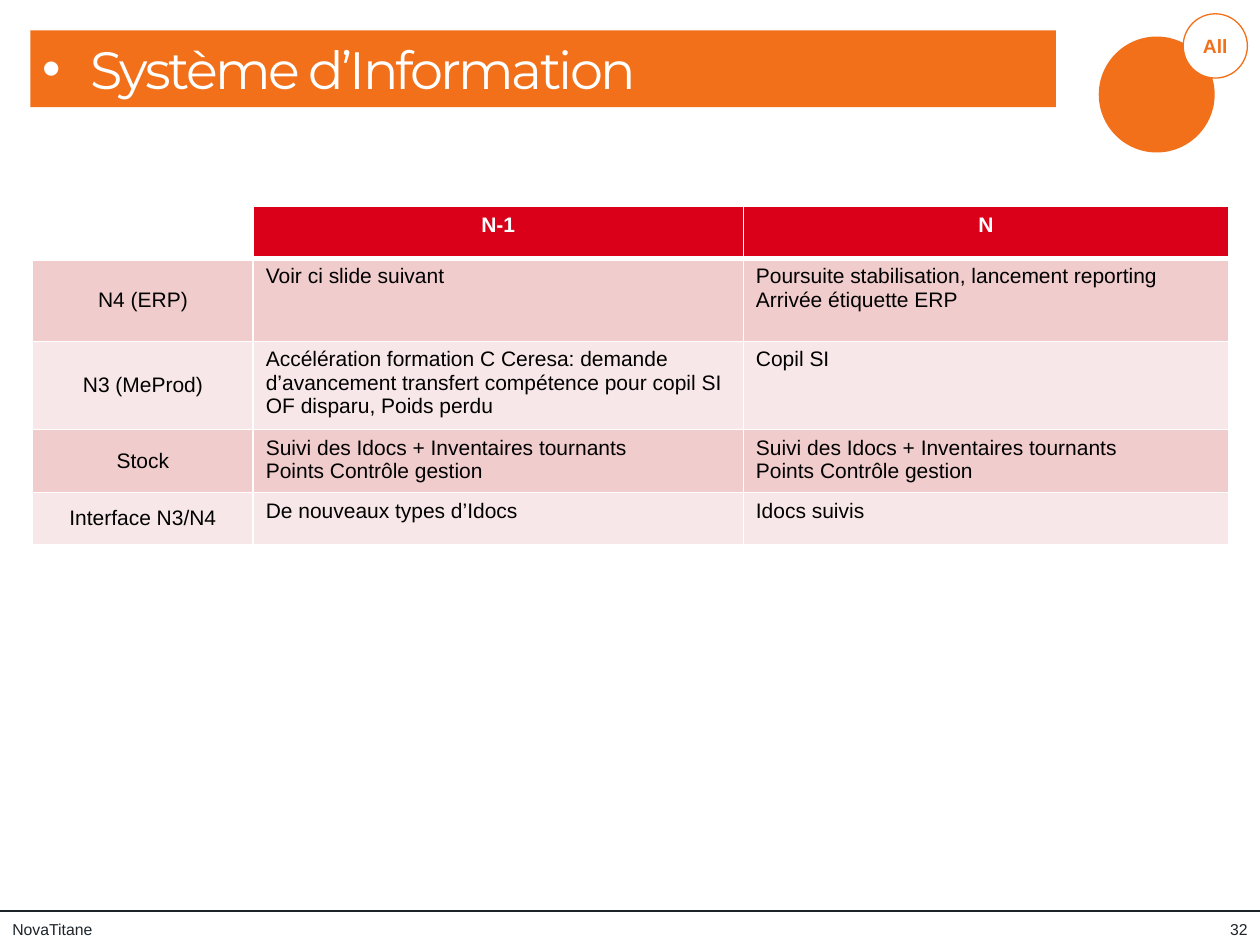
"""Build the information system status slide."""
from lxml import etree
from pptx import Presentation
from pptx.dml.color import RGBColor
from pptx.enum.shapes import MSO_CONNECTOR, MSO_SHAPE
from pptx.enum.text import MSO_ANCHOR, MSO_AUTO_SIZE, PP_ALIGN
from pptx.oxml.ns import qn
from pptx.util import Inches, Pt

LEFT, CENTER, RIGHT = PP_ALIGN.LEFT, PP_ALIGN.CENTER, PP_ALIGN.RIGHT
TOP, MIDDLE = MSO_ANCHOR.TOP, MSO_ANCHOR.MIDDLE
NO_AUTOFIT = MSO_AUTO_SIZE.NONE
OVAL = MSO_SHAPE.OVAL
STRAIGHT = MSO_CONNECTOR.STRAIGHT

COLORS = {
    "orange": "F27019",
    "white": "FFFFFF",
    "ink": "1D252B",
    "black": "000000",
    "red": "DB001A",
    "band_dark": "F1CCCD",
    "band_light": "F8E7E8",
}
COLUMN_WIDTHS = [1.75, 3.89, 3.85]
ROW_HEIGHTS = [0.41, 0.66, 0.66, 0.48, 0.41]
STOCK_ACTIONS = ["Suivi des Idocs + Inventaires tournants", "Points Contrôle gestion"]
TABLE_ROWS = [
    [[], ["N-1"], ["N"]],
    [
        ["N4 (ERP)"],
        ["Voir ci slide suivant"],
        ["Poursuite stabilisation, lancement reporting", "Arrivée étiquette ERP"],
    ],
    [
        ["N3 (MeProd)"],
        [
            "Accélération formation C Ceresa: demande d’avancement "
            "transfert compétence pour copil SI",
            "OF disparu, Poids perdu",
        ],
        ["Copil SI"],
    ],
    [["Stock"], STOCK_ACTIONS, STOCK_ACTIONS],
    [["Interface N3/N4"], ["De nouveaux types d’Idocs"], ["Idocs suivis"]],
]


def rgb(name):
    """Return the named colour."""
    return RGBColor.from_string(COLORS[name])


def paint(target, name):
    """Give a shape or cell a solid fill."""
    target.fill.solid()
    target.fill.fore_color.rgb = rgb(name)


def add_span(para, text, size, color, bold=False, font="Arial"):
    """Add one formatted run to a paragraph."""
    span = para.add_run()
    span.text = text
    span.font.name = font
    span.font.size = Pt(size)
    span.font.bold = bold
    span.font.color.rgb = rgb(color)
    return span


def add_title(page, text):
    """Fill the title placeholder as a bulleted orange banner."""
    box = page.shapes.title
    box.left, box.top = Inches(0.24), Inches(0.24)
    box.width, box.height = Inches(8.14), Inches(0.61)
    paint(box, "orange")
    frame = box.text_frame
    frame.word_wrap = True
    frame.auto_size = NO_AUTOFIT
    frame.vertical_anchor = MIDDLE
    para = frame.paragraphs[0]
    para.alignment = LEFT
    properties = para._p.get_or_add_pPr()
    properties.set("marL", str(Inches(0.38)))
    properties.set("indent", str(-Inches(0.38)))
    etree.SubElement(properties, qn("a:buFont"), typeface="Arial")
    etree.SubElement(properties, qn("a:buChar"), char="•")
    span = add_span(para, text, 30, "white", font="Montserrat")
    span.font._element.set("spc", "-150")


def add_circle(page, left, top, size, fill, outline=None):
    """Add a circle with an optional thin outline."""
    circle = page.shapes.add_shape(
        OVAL, Inches(left), Inches(top), Inches(size), Inches(size)
    )
    circle.shadow.inherit = False
    paint(circle, fill)
    if outline:
        circle.line.color.rgb = rgb(outline)
        circle.line.width = Pt(0.75)
    else:
        circle.line.fill.background()
    return circle


def add_badge(page, text):
    """Add the large disc and its small labelled circle."""
    add_circle(page, 8.72, 0.29, 0.92, "orange")
    label = add_circle(page, 9.39, 0.11, 0.51, "white", "orange")
    frame = label.text_frame
    frame.margin_left = frame.margin_right = 0
    frame.vertical_anchor = MIDDLE
    para = frame.paragraphs[0]
    para.alignment = CENTER
    add_span(para, text, 11, "orange", bold=True)


def add_rule(page, top):
    """Add the full-width footer line."""
    rule = page.shapes.add_connector(
        STRAIGHT, Inches(0), Inches(top), Inches(10), Inches(top)
    )
    rule.line.color.rgb = rgb("ink")
    rule.line.width = Pt(1.5)
    etree.SubElement(rule._element.spPr, qn("a:effectLst"))


def add_footer_text(page, text, left, width, alignment):
    """Add one small text box below the footer line."""
    box = page.shapes.add_textbox(
        Inches(left), Inches(7.25), Inches(width), Inches(0.25)
    )
    frame = box.text_frame
    frame.word_wrap = True
    frame.vertical_anchor = MIDDLE
    para = frame.paragraphs[0]
    para.alignment = alignment
    add_span(para, text, 9, "ink")


def set_borders(cell, widths):
    """Draw white cell borders with the given point widths by side."""
    properties = cell._tc.get_or_add_tcPr()
    for side, width in widths.items():
        border = etree.SubElement(properties, qn(f"a:ln{side}"), w=str(Pt(width)))
        fill = etree.SubElement(border, qn("a:solidFill"))
        etree.SubElement(fill, qn("a:srgbClr"), val=COLORS["white"])


def fill_cell(cell, lines, row, column):
    """Write and format one table cell by its place in the grid."""
    header, label = row == 0, column == 0
    set_borders(
        cell, {"L": 1, "R": 1, "T": 3 if row == 1 else 1, "B": 3 if header else 1}
    )
    if header:
        paint(cell, "white" if label else "red")
    else:
        paint(cell, "band_dark" if row % 2 else "band_light")
    cell.vertical_anchor = MIDDLE if label else TOP
    frame = cell.text_frame
    for index, text in enumerate(lines):
        para = frame.add_paragraph() if index else frame.paragraphs[0]
        para.alignment = CENTER if header or label else LEFT
        add_span(para, text, 12, "white" if header else "black", bold=header)


def add_status_table(page):
    """Add the table comparing both periods."""
    table = page.shapes.add_table(
        len(ROW_HEIGHTS), len(COLUMN_WIDTHS), Inches(0.26), Inches(1.64),
        Inches(sum(COLUMN_WIDTHS)), Inches(sum(ROW_HEIGHTS)),
    ).table
    for column, width in zip(table.columns, COLUMN_WIDTHS):
        column.width = Inches(width)
    for row, height in zip(table.rows, ROW_HEIGHTS):
        row.height = Inches(height)
    for row, contents in enumerate(TABLE_ROWS):
        for column, lines in enumerate(contents):
            fill_cell(table.cell(row, column), lines, row, column)


def main():
    """Build and save the deck."""
    deck = Presentation()
    deck.slide_width, deck.slide_height = Inches(10), Inches(7.5)
    page = deck.slides.add_slide(deck.slide_layouts[5])
    add_rule(page, 7.23)
    add_badge(page, "All")
    add_footer_text(page, "NovaTitane", 0, 3.44, LEFT)
    add_footer_text(page, "32", 9.51, 0.49, RIGHT)
    add_title(page, "Système d’Information")
    add_status_table(page)
    deck.save("out.pptx")


if __name__ == "__main__":
    main()
